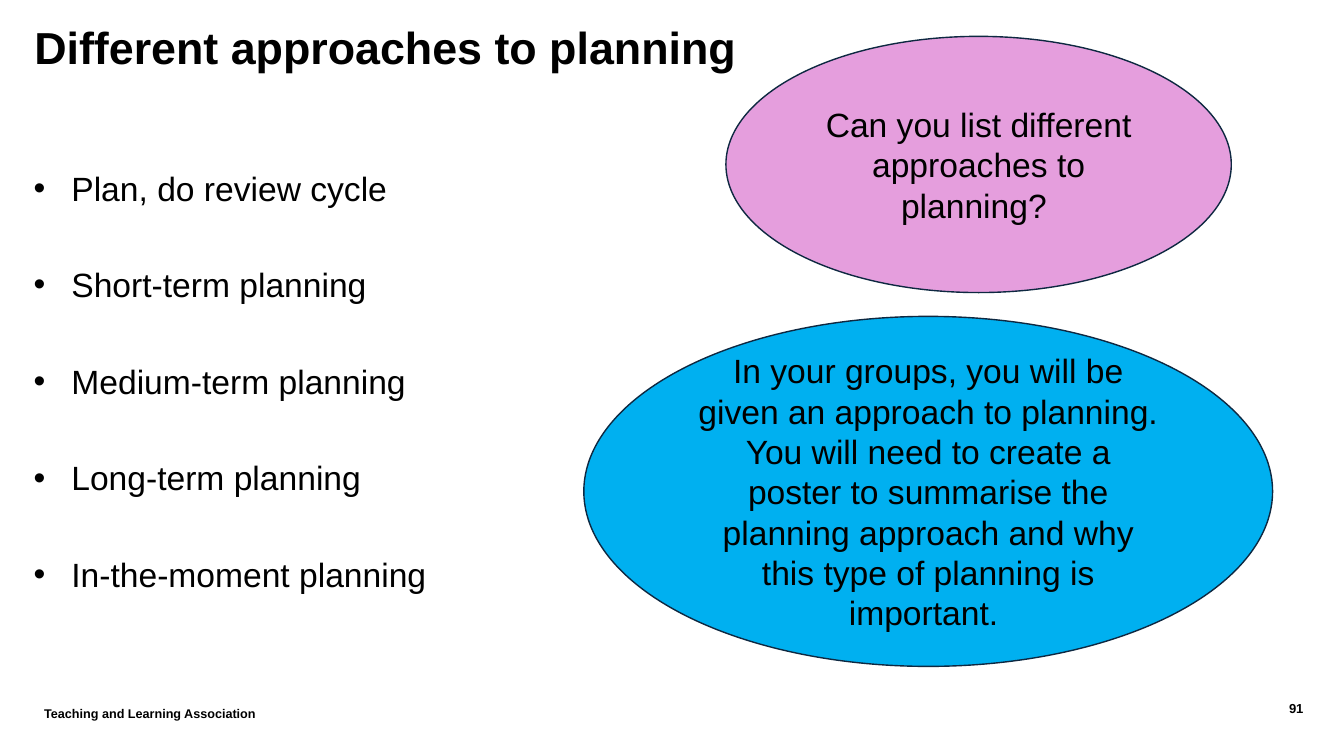
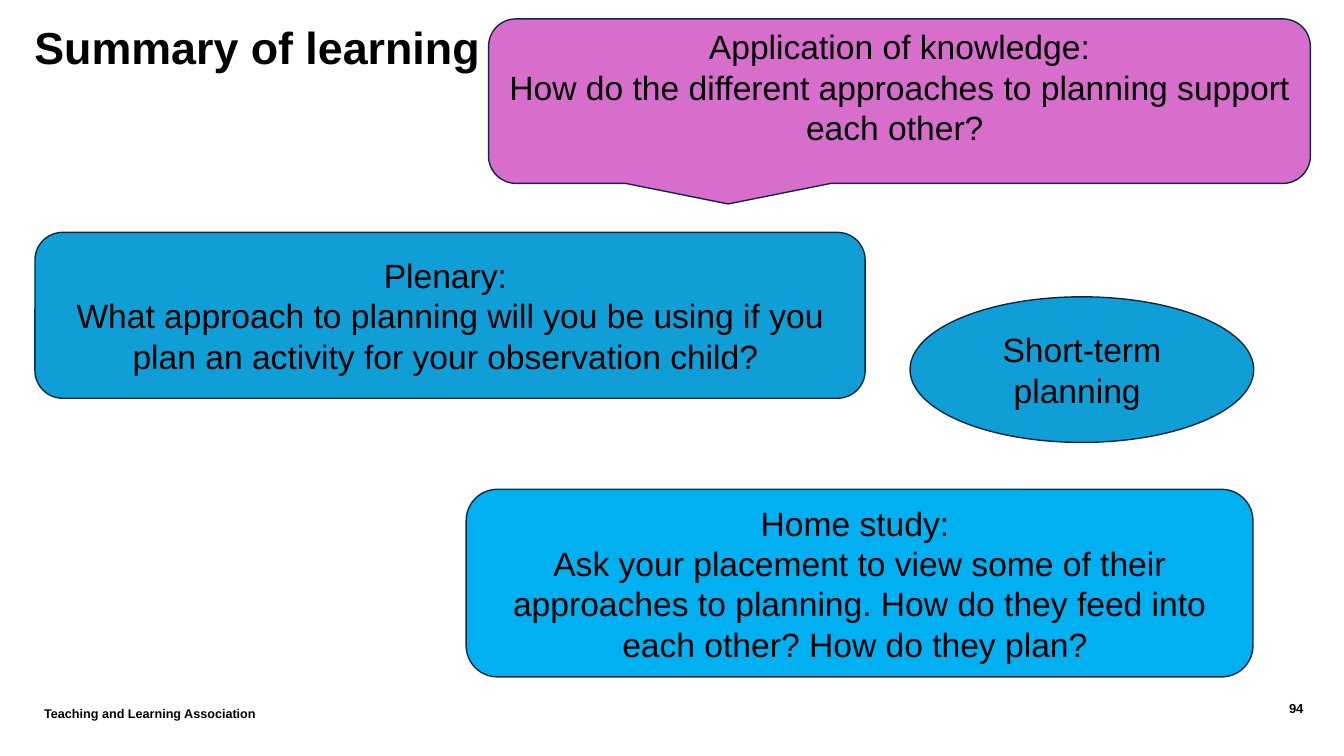
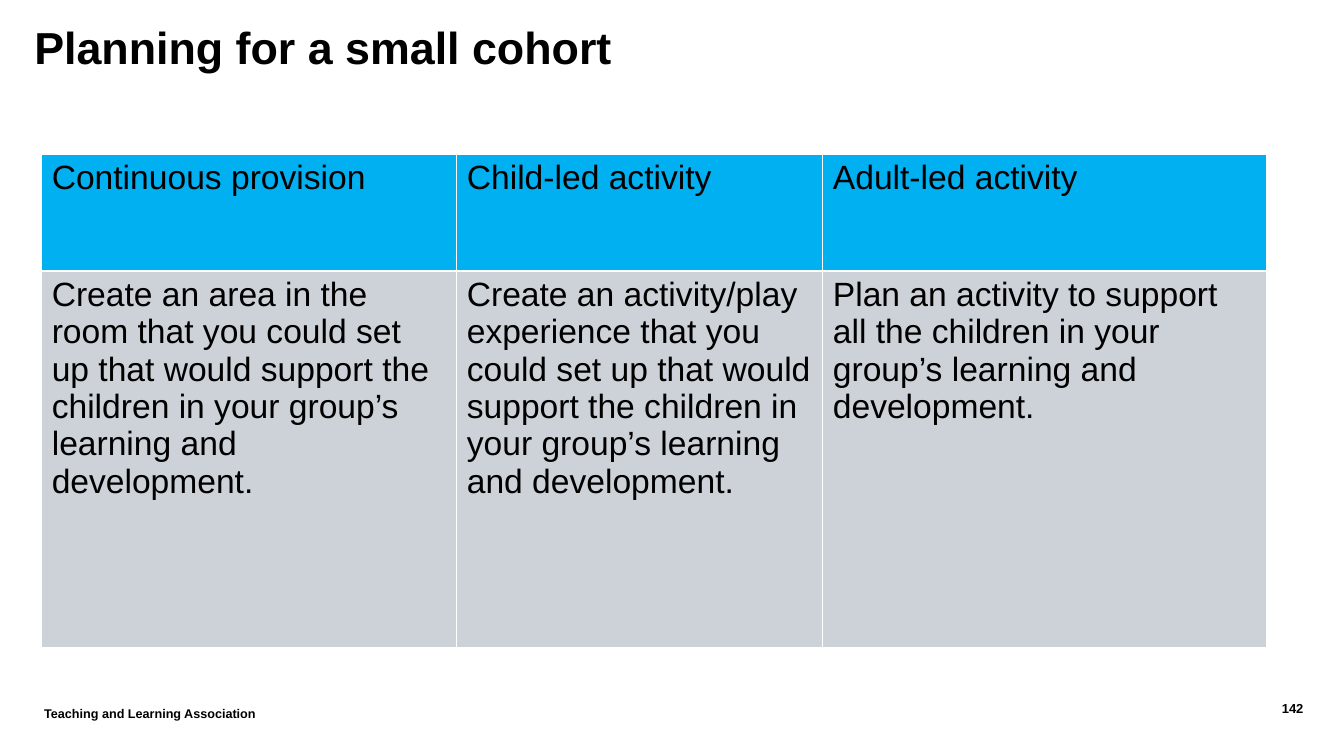
from pptx import Presentation
from pptx import util as u
from pptx.dml import color
from pptx.enum import shapes, text
from pptx.oxml import parse_xml
from pptx.oxml import ns

Pt = u.Pt
FONT = "Arial"
BLACK, NAVY, SKY, BLUE = "000000", "0E2841", "00B0F0", "0F9ED5"
PINK, ROSE, GREY = "E59EDD", "D86ECC", "CCD2D8"
FOOTER = "Teaching and Learning Association"
OVAL = shapes.MSO_SHAPE.OVAL
ROUND = shapes.MSO_SHAPE.ROUNDED_RECTANGLE
SPEECH = shapes.MSO_SHAPE.ROUNDED_RECTANGULAR_CALLOUT
LEFT, MID, RIGHT = text.PP_ALIGN.LEFT, text.PP_ALIGN.CENTER, text.PP_ALIGN.RIGHT


def paint(target, code):
    """Set a fill or a font to a hex colour."""
    if hasattr(target, "solid"):
        target.solid()
        target = target.fore_color
    else:
        target = target.color
    target.rgb = color.RGBColor.from_string(code)


def place(box):
    return [Pt(n) for n in box]


def write(frame, lines, size=24, bold=False, align=LEFT, pitch=None):
    """Fill a text frame, one paragraph for each line."""
    frame.word_wrap = True
    for i, line in enumerate(lines):
        para = frame.paragraphs[0] if i == 0 else frame.add_paragraph()
        para.alignment = align
        if pitch:
            para.line_spacing = Pt(pitch)
        run = para.add_run()
        run.text = line
        run.font.name, run.font.size, run.font.bold = FONT, Pt(size), bold
        paint(run.font, BLACK)


def inset(frame, side=0, top=0, base=0):
    frame.margin_left = frame.margin_right = Pt(side)
    frame.margin_top, frame.margin_bottom = Pt(top), Pt(base)


def label(slide, box, lines, side=0, top=0, **style):
    frame = slide.shapes.add_textbox(*place(box)).text_frame
    inset(frame, side, top, top)
    write(frame, lines, **style)
    return frame


def start(deck, title, number):
    """Add a slide with its title, footer and page number."""
    slide = deck.slides.add_slide(deck.slide_layouts[5])
    head = slide.shapes.title
    head.left, head.top, head.width, head.height = place((24.5, 26, 886, 73))
    frame = head.text_frame
    inset(frame)
    frame.auto_size = text.MSO_AUTO_SIZE.NONE
    frame.vertical_anchor = text.MSO_ANCHOR.TOP
    write(frame, [title], size=32, bold=True, pitch=26.7)
    label(slide, (835, 500.4, 96, 29), [str(number)], size=9.3, bold=True, align=RIGHT)
    label(slide, (24.5, 500.4, 807, 29), [FOOTER], side=7.2, top=3.6, size=9, bold=True)
    return slide


def bubble(slide, kind, box, fill, lines, base=3.6):
    """Draw an outlined shape with centred text."""
    shape = slide.shapes.add_shape(kind, *place(box))
    shape.shadow.inherit = False
    paint(shape.fill, fill)
    paint(shape.line.fill, NAVY)
    shape.line.width = Pt(1)
    frame = shape.text_frame
    inset(frame, 7.2, 3.6, base)
    frame.vertical_anchor = text.MSO_ANCHOR.MIDDLE
    write(frame, lines, align=MID, pitch=28.8)


def bullets(slide, box, items):
    frame = label(slide, box, items, pitch=34.5)
    for i, para in enumerate(frame.paragraphs):
        if i:
            para.space_before = Pt(34.5)
        props = para._p.get_or_add_pPr()
        props.set("marL", str(Pt(27)))
        props.set("indent", str(-Pt(27)))
        for tag in ('buFont typeface="Arial"', 'buChar char="•"'):
            props.append(parse_xml(f"<a:{tag} {ns.nsdecls('a')}/>"))


def grid(slide, box, widths, heights, rows, fills):
    table = slide.shapes.add_table(len(rows), len(widths), *place(box)).table
    for col, width in zip(table.columns, widths):
        col.width = Pt(width)
    for row, height, words, fill in zip(table.rows, heights, rows, fills):
        row.height = Pt(height)
        for cell, word in zip(row.cells, words):
            paint(cell.fill, fill)
            write(cell.text_frame, [word], pitch=26.7)


def main():
    deck = Presentation()
    deck.slide_width, deck.slide_height = Pt(960), Pt(540)

    # Approaches
    slide = start(deck, "Different approaches to planning", 91)
    bubble(slide, OVAL, (518.5, 26, 361, 183), PINK,
           ["Can you list different approaches to planning? "])
    kinds = ("Plan, do review cycle", "Short-term planning", "Medium-term planning",
             "Long-term planning", "In-the-moment planning")
    bullets(slide, (24, 114, 412, 311), kinds)
    bubble(slide, OVAL, (417, 226, 492, 250), SKY,
           ["In your groups, you will be given an approach to planning. "
            "You will need to create a poster to summarise the planning "
            "approach and why this type of planning is important. "])

    # Summary
    slide = start(deck, "Summary of learning", 94)
    bubble(slide, SPEECH, (349, 13.5, 587, 117.5), ROSE,
           ["Application of knowledge:",
            "How do the different approaches to planning support each other? "],
           base=24)
    bubble(slide, ROUND, (333, 349.5, 562, 134), SKY,
           ["Home study: ",
            "Ask your placement to view some of their approaches to planning. "
            "How do they feed into each other? How do they plan? "])
    bubble(slide, ROUND, (25, 166, 593, 118.5), BLUE,
           ["Plenary: ",
            "What approach to planning will you be using if you plan an "
            "activity for your observation child? "])
    bubble(slide, OVAL, (650, 212, 245.5, 104), BLUE, ["Short-term planning "])

    # Cohort
    slide = start(deck, "Planning for a small cohort", 142)
    heads = ("Continuous provision", "Child-led activity", "Adult-led activity")
    tasks = ("Create an area in the room that you could set up that would support "
             "the children in your group’s learning and development.",
             "Create an activity/play experience that you could set up that would "
             "support the children in your group’s learning and development.",
             "Plan an activity to support all the children in your group’s "
             "learning and development.")
    grid(slide, (29.8, 110.4, 875, 352.5), (296.5, 261.5, 317), (83.2, 269.3),
         (heads, tasks), (SKY, GREY))

    deck.save("out.pptx")


if __name__ == "__main__":
    main()
